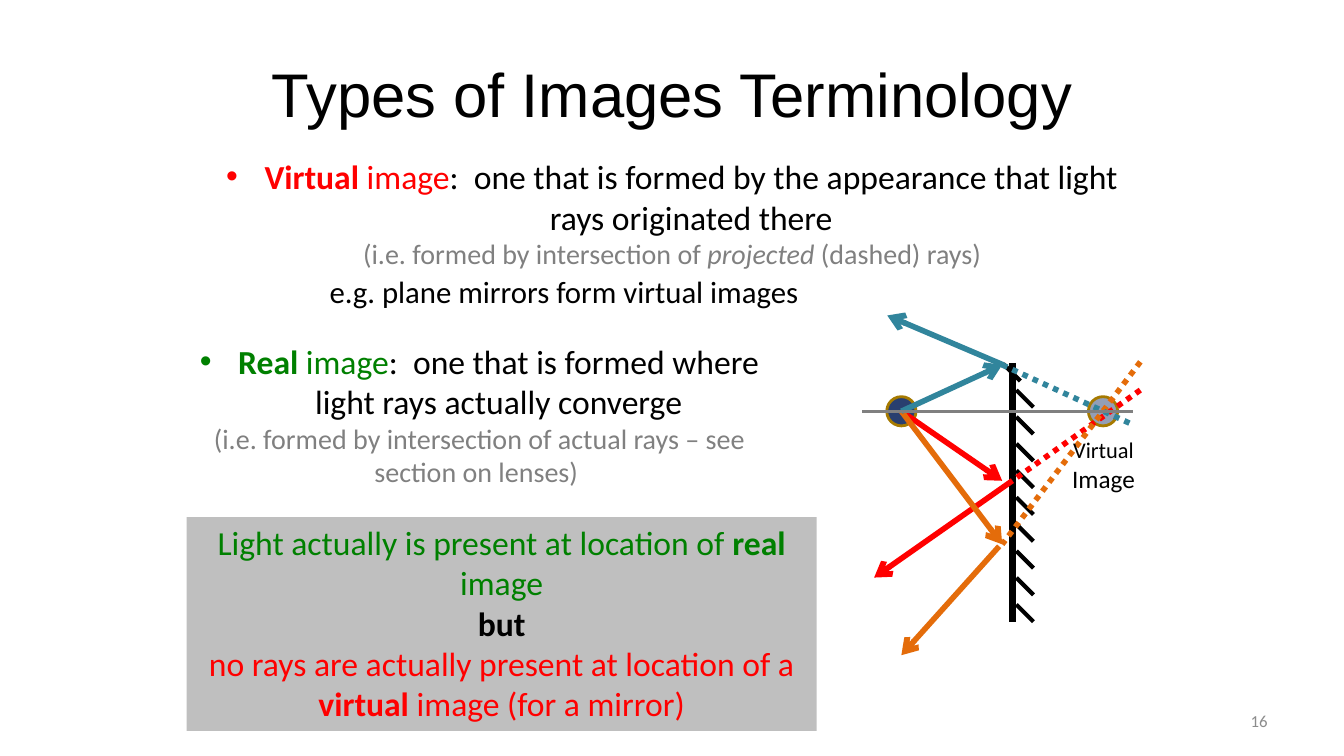
from pptx import Presentation
from pptx import util as u
from pptx.dml.color import RGBColor
from pptx.enum import dml, shapes, text
from pptx.oxml import xmlchemy
from pptx.oxml.ns import qn
from lxml import etree

COLORS = {
    "black": "000000", "red": "FF0000", "green": "008000", "orange": "E46C0A",
    "teal": "31859C", "grey": "808080", "panel": "BFBFBF", "number": "8C8C8C",
    "object": "293F6F", "rim": "A67A00",
}
WIDTH, HEIGHT = 13.33, 7.5
BREAK = "\n"

TITLE = [[("Types of Images Terminology", 44, "black", {"name": "Arial"})]]
REAL = [
    [("Real ", 24, "green", {"bold": True}), ("image", 24, "green", {}),
     (":  one that is formed where light rays actually converge", 24, "black", {})],
    [("(i.e. formed by intersection of actual rays – see section on lenses) ", 20, "grey", {})],
]
VIRTUAL = [
    [("Virtual", 24, "red", {"bold": True}), (" image", 24, "red", {}),
     (":  one that is formed by the appearance that light rays originated there", 24, "black", {})],
    [("(i.e. formed by intersection of ", 20, "grey", {}),
     ("projected", 20, "grey", {"italic": True}), (" (dashed) rays)", 20, "grey", {})],
]
EXAMPLE = [[("e.g. plane mirrors form virtual images", 22, "black", {})]]
SUMMARY = [[
    ("Light actually is present at location of ", 24, "green", {}),
    ("real", 24, "green", {"bold": True}), (" image", 24, "green", {}), BREAK,
    ("but", 24, "black", {"bold": True}), BREAK,
    ("no rays are actually present at location of a ", 24, "red", {}),
    ("virtual", 24, "red", {"bold": True}), (" image (for a mirror)", 24, "red", {}),
]]
NUMBER = [[("16", 12, "number", {})]]
IMAGE_LABEL = [[("Virtual", 16, "black", {}), (" Image", 18, "black", {})]]

MIRROR_X, MIRROR_TOP, MIRROR_BOTTOM = 10.04, 3.6, 6.17
AXIS_Y, OBJECT_X, IMAGE_X, DISC = 4.08, 8.94, 10.94, 0.29
HATCH, HATCH_X, HATCH_TOP, HATCH_STEP, HATCHES = 0.17, 10.08, 3.87, 0.266, 9
OBJECT = (OBJECT_X, AXIS_Y)
RAYS = [
    ("red", (9.94, 4.77), (MIRROR_X, 4.77), (8.67, 5.73), (11.31, 3.87), (MIRROR_X, 4.77)),
    ("orange", (9.94, 5.4), (9.91, 5.42), (OBJECT_X, 6.5), (11.31, 3.59), (9.94, 5.4)),
    ("teal", (9.94, 3.62), (9.95, 3.62), (8.8, 3.13), (9.94, 3.62), (11.25, 4.22)),
]

deck = Presentation()
deck.slide_width, deck.slide_height = u.Inches(WIDTH), u.Inches(HEIGHT)
slide = deck.slides.add_slide(deck.slide_layouts[6])


def rgb(color):
    return RGBColor.from_string(COLORS[color])


def inches(*lengths):
    return [u.Inches(length) for length in lengths]


def write(holder, paragraphs, align="CENTER", anchor="TOP", bullet=False):
    frame = holder.text_frame
    frame.word_wrap = True
    frame.vertical_anchor = getattr(text.MSO_ANCHOR, anchor)
    for index, pieces in enumerate(paragraphs):
        line = frame.paragraphs[0] if index == 0 else frame.add_paragraph()
        line.alignment = getattr(text.PP_ALIGN, align)
        if bullet and index == 0:
            props = line._p.get_or_add_pPr()
            indent = u.Inches(0.38)
            props.set("marL", str(indent))
            props.set("indent", str(-indent))
            etree.SubElement(props, qn("a:buFont")).set("typeface", "Arial")
            etree.SubElement(props, qn("a:buChar")).set("char", "•")
        for piece in pieces:
            if piece == BREAK:
                line.add_line_break()
                continue
            words, size, color, extra = piece
            run = line.add_run()
            run.text = words
            run.font.color.rgb = rgb(color)
            formats = {"name": "Calibri", "size": u.Pt(size), "bold": False, "italic": False}
            for key, value in {**formats, **extra}.items():
                setattr(run.font, key, value)


def text_box(box, paragraphs, **layout):
    write(slide.shapes.add_textbox(*inches(*box)), paragraphs, **layout)


def segment(start, end, color, width, arrow=False, dotted=False):
    ray = slide.shapes.add_connector(shapes.MSO_CONNECTOR.STRAIGHT, *inches(*start, *end))
    ray.line.color.rgb = rgb(color)
    ray.line.width = u.Pt(width)
    if dotted:
        ray.line.dash_style = dml.MSO_LINE.ROUND_DOT
    if arrow:
        etree.SubElement(ray.line._get_or_add_ln(), qn("a:tailEnd")).set("type", "arrow")
    etree.SubElement(ray._element.spPr, qn("a:effectLst"))


def filled(kind, box, color):
    body = slide.shapes.add_shape(kind, *inches(*box))
    body.shadow.inherit = False
    body.fill.solid()
    body.fill.fore_color.rgb = rgb(color)
    body.line.fill.background()
    return body


def disc(center_x, opacity=100):
    box = (center_x - DISC / 2, AXIS_Y - DISC / 2, DISC, DISC)
    body = filled(shapes.MSO_SHAPE.OVAL, box, "object")
    body.line.color.rgb = rgb("rim")
    body.line.width = u.Pt(2)
    if opacity < 100:
        shade = body._element.spPr.find(qn("a:solidFill"))[0]
        etree.SubElement(shade, qn("a:alpha")).set("val", str(opacity * 1000))


text_box((0.67, 0.3, 12, 1.25), TITLE, anchor="MIDDLE")
text_box((1.88, 3.33, 5.75, 1.58), REAL, bullet=True)
text_box((2.04, 1.5, 9.25, 1.25), VIRTUAL, bullet=True)

disc(IMAGE_X, opacity=50)
segment((MIRROR_X, MIRROR_TOP), (MIRROR_X, MIRROR_BOTTOM), "black", 5)
hatch_starts = [(9.95, 3.61)] + [(HATCH_X, HATCH_TOP + i * HATCH_STEP) for i in range(HATCHES)]
for x, y in hatch_starts:
    segment((x, y), (x + HATCH, y + HATCH), "black", 3)
disc(OBJECT_X)
for color, hit, leave, reach, dots_from, dots_to in RAYS:
    segment(OBJECT, hit, color, 4, arrow=True)
    segment(leave, reach, color, 4, arrow=True)
    segment(dots_from, dots_to, color, 4, dotted=True)
segment((8.55, AXIS_Y), (11.24, AXIS_Y), "grey", 2)

text_box((3.17, 2.66, 6.42, 0.47), EXAMPLE, align="LEFT")
write(filled(shapes.MSO_SHAPE.RECTANGLE, (1.85, 5.13, 6.25, 2.12), "panel"), SUMMARY)
text_box((9.56, 6.95, 3.11, 0.4), NUMBER, align="RIGHT", anchor="MIDDLE")
text_box((10.28, 4.25, 1.33, 0.71), IMAGE_LABEL)

deck.save("out.pptx")
